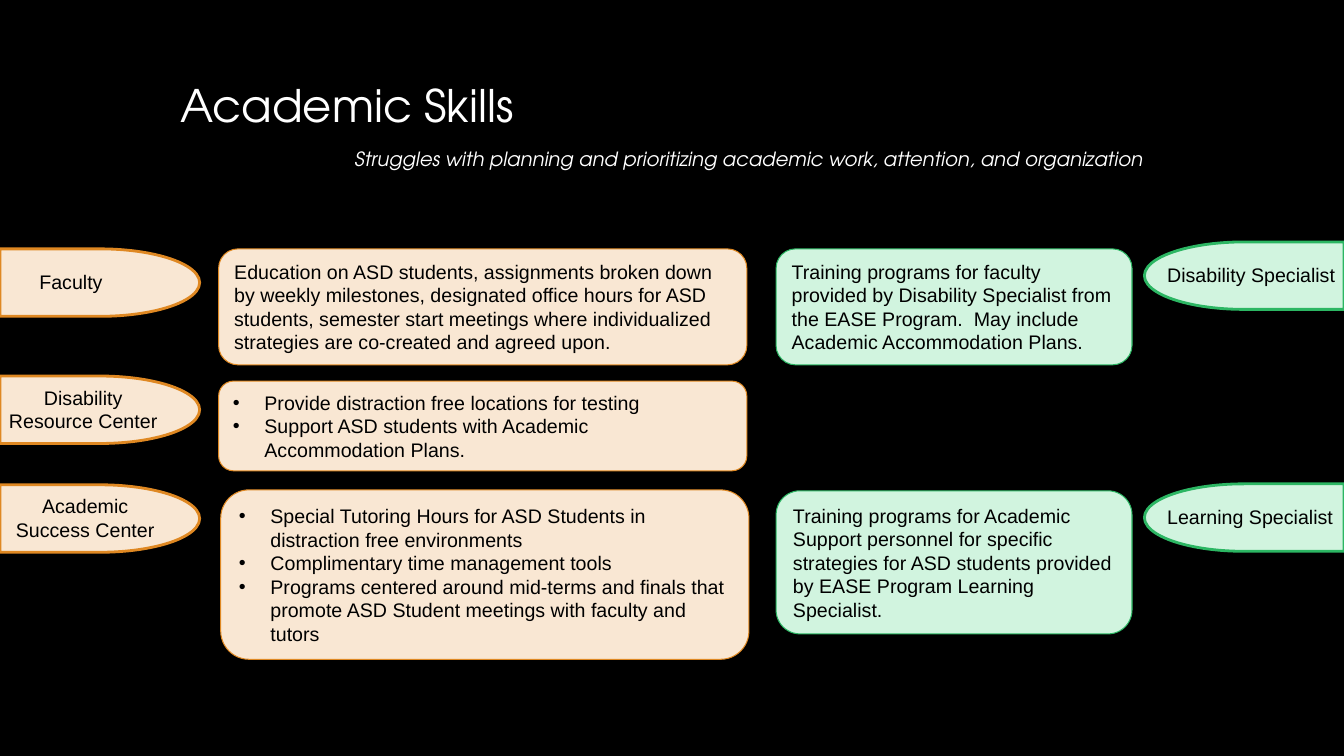
from lxml import etree
from pptx import Presentation
from pptx.dml.color import RGBColor
from pptx.enum.shapes import MSO_SHAPE as Shape
from pptx.enum.text import MSO_ANCHOR as Anchor, MSO_AUTO_SIZE as AutoSize, PP_ALIGN as Align
from pptx.oxml.ns import qn
from pptx.util import Pt

SLIDE_W, SLIDE_H = 960, 540
TAB_W, TAB_H = 142.6, 48.2
HEADING_FONT, BODY_FONT = "TeX Gyre Adventor", "Arial"
WHITE, BLACK = "FFFFFF", "000000"
ORANGE = ("F9E7D3", "DF8822")
GREEN = ("D1F4DF", "2CB663")

# Tab top, label, label box (left, width), card box, card paragraphs
CAMPUS_ROWS = [
    (177.8, "Faculty", (15.7, 70), (156.2, 177.8, 377.3, 82.8), [
        "Education on ASD students, assignments broken down by weekly milestones, "
        "designated office hours for ASD students, semester start meetings where "
        "individualized strategies are co-created and agreed upon."]),
    (268.6, "Disability Resource Center", (-1.4, 121.7), (156.2, 272.2, 377.3, 64.1), [
        "Provide distraction free locations for testing",
        "Support ASD students with Academic Accommodation Plans."]),
    (346.3, "Academic Success Center", (0, 121.7), (157.7, 349.9, 377.3, 121), [
        "Special Tutoring Hours for ASD Students in distraction free environments",
        "Complimentary time management tools",
        "Programs centered around mid-terms and finals that promote ASD Student "
        "meetings with faculty and tutors"]),
]
SPECIALIST_ROWS = [
    (172.8, "Disability Specialist", (826.6, 133.4), (554.4, 177.8, 254.2, 82.8), [
        "Training programs for faculty provided by Disability Specialist from the "
        "EASE Program.  May include Academic Accommodation Plans."]),
    (345.6, "Learning Specialist", (826.6, 133.4), (554.4, 350.6, 254.2, 102.2), [
        "Training programs for Academic Support personnel for specific strategies "
        "for ASD students provided by EASE Program Learning Specialist."]),
]


def color(hex_text):
    return RGBColor.from_string(hex_text)


def points(box):
    return [Pt(length) for length in box]


def write(frame, paragraphs, size=14, font=BODY_FONT, ink=BLACK, align=Align.LEFT,
          anchor=Anchor.MIDDLE, italic=False, spacing=1.0):
    frame.word_wrap = True
    frame.auto_size = AutoSize.NONE
    frame.vertical_anchor = anchor
    frame.text = "\n".join(paragraphs)
    for paragraph in frame.paragraphs:
        paragraph.alignment = align
        paragraph.line_spacing = spacing
        for run in paragraph.runs:
            run.font.name, run.font.size = font, Pt(size)
            run.font.italic = italic
            run.font.color.rgb = color(ink)


def add_bullet(paragraph, indent=22.5):
    props = paragraph._p.get_or_add_pPr()
    props.set("marL", str(Pt(indent)))
    props.set("indent", str(-Pt(indent)))
    etree.SubElement(props, qn("a:buFont")).set("typeface", BODY_FONT)
    etree.SubElement(props, qn("a:buChar")).set("char", "•")


def add_panel(slide, kind, box, palette, line_width):
    panel = slide.shapes.add_shape(kind, *points(box))
    fill, line = palette
    panel.shadow.inherit = False
    panel.fill.solid()
    panel.fill.fore_color.rgb = color(fill)
    panel.line.color.rgb = color(line)
    panel.line.width = Pt(line_width)
    return panel


def add_heading(slide, box):
    left, top, width, height = box
    title = slide.shapes.title
    title.left, title.top, title.width, title.height = points((left, top, width, height))
    frame = title.text_frame
    frame.margin_left = frame.margin_right = frame.margin_top = frame.margin_bottom = Pt(7.2)
    write(frame, ["Academic Skills"], 32, HEADING_FONT, WHITE, anchor=Anchor.TOP, spacing=0.9)

    subtitle = slide.shapes.add_textbox(*points((left + 111.6, top + 46, 604, 26.6)))
    write(subtitle.text_frame,
          ["Struggles with planning and prioritizing academic work, attention, and organization"],
          14, HEADING_FONT, WHITE, Align.CENTER, Anchor.TOP, italic=True, spacing=1.15)


def add_tab(slide, box, label, label_span, palette, faces_left):
    left, top, width, height = box
    tab = add_panel(slide, Shape.FLOWCHART_DELAY, box, palette, 2)
    tab.rotation = 180 if faces_left else 0
    label_left, label_width = label_span
    caption = slide.shapes.add_textbox(*points((label_left, top - 0.5, label_width, height)))
    if faces_left:
        caption.text_frame.margin_right = 0
    write(caption.text_frame, [label], align=Align.LEFT if faces_left else Align.CENTER)


def add_card(slide, box, paragraphs, palette):
    card = add_panel(slide, Shape.ROUNDED_RECTANGLE, box, palette, 0.75)
    write(card.text_frame, paragraphs)
    if len(paragraphs) > 1:
        for paragraph in card.text_frame.paragraphs:
            add_bullet(paragraph)


def add_support_column(slide, tab_left, rows, palette, faces_left=False):
    for tab_top, label, label_span, card_box, paragraphs in rows:
        add_tab(slide, (tab_left, tab_top, TAB_W, TAB_H), label, label_span, palette, faces_left)
        add_card(slide, card_box, paragraphs, palette)


def main():
    deck = Presentation()
    deck.slide_width, deck.slide_height = Pt(SLIDE_W), Pt(SLIDE_H)
    slide = deck.slides.add_slide(deck.slide_layouts[5])
    slide.background.fill.solid()
    slide.background.fill.fore_color.rgb = color(BLACK)
    add_heading(slide, (121.7, 52.6, 756, 39.6))
    add_support_column(slide, 0, CAMPUS_ROWS, ORANGE)
    add_support_column(slide, SLIDE_W - TAB_W, SPECIALIST_ROWS, GREEN, faces_left=True)
    deck.save("out.pptx")


if __name__ == "__main__":
    main()
